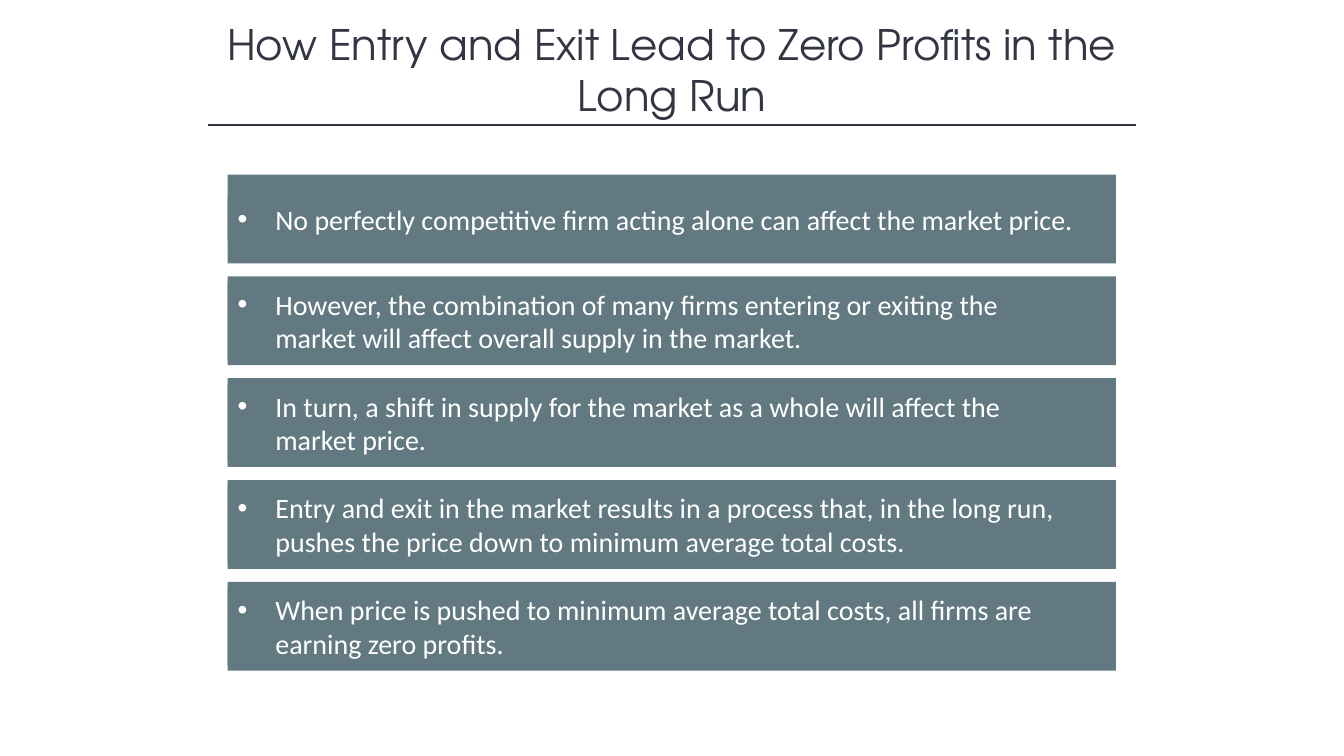
from lxml import etree
from pptx import Presentation
from pptx import util as u
from pptx.dml.color import RGBColor
from pptx.enum import shapes, text
from pptx.oxml.ns import qn

INK, SLATE, WHITE = "323542", "627981", "FFFFFF"
LINE_HEIGHT, CAPTION_PADDING = 0.85, 0.27

# Each statement with the number of lines it takes up
STATEMENTS = [
    ("No perfectly competitive firm acting alone can affect the market price.", 1),
    ("However, the combination of many firms entering or exiting the market "
     "will affect overall supply in the market.", 2),
    ("In turn, a shift in supply for the market as a whole will affect the market price.", 2),
    ("Entry and exit in the market results in a process that, in the long run, "
     "pushes the price down to minimum average total costs.", 2),
    ("When price is pushed to minimum average total costs, all firms are "
     "earning zero profits.", 2),
]


def colour(value):
    return RGBColor.from_string(value)


def write(shape, words, *, size, font, ink, align, bullet=False):
    frame = shape.text_frame
    frame.word_wrap = True
    frame.auto_size = text.MSO_AUTO_SIZE.NONE
    frame.vertical_anchor = text.MSO_ANCHOR.MIDDLE
    para = frame.paragraphs[0]
    para.alignment = align
    if bullet:
        add_bullet(para)
    span = para.add_run()
    span.text = words
    span.font.size = u.Pt(size)
    span.font.name = font
    span.font.color.rgb = colour(ink)


def add_bullet(para, indent=0.95):
    properties = para._p.get_or_add_pPr()
    properties.set("marL", str(u.Cm(indent)))
    properties.set("indent", str(-u.Cm(indent)))
    etree.SubElement(properties, qn("a:buFont")).set("typeface", "Arial")
    etree.SubElement(properties, qn("a:buChar")).set("char", "•")


def add_rectangle(parent, left, top, width, height):
    box = parent.shapes.add_shape(
        shapes.MSO_SHAPE.RECTANGLE, u.Cm(left), u.Cm(top), u.Cm(width), u.Cm(height))
    box.shadow.inherit = False
    box.fill.solid()
    box.fill.fore_color.rgb = colour(SLATE)
    box.line.fill.background()
    return box


def add_heading(page, left, top, width, height):
    title = page.shapes.title
    title.left, title.top = u.Cm(left), u.Cm(top)
    title.width, title.height = u.Cm(width), u.Cm(height)
    write(title, "How Entry and Exit Lead to Zero Profits in the Long Run",
          size=30, font="TeX Gyre Adventor", ink=INK, align=text.PP_ALIGN.CENTER)

    inset, rule_top = 1, u.Cm(top + height)
    rule = page.shapes.add_connector(
        shapes.MSO_CONNECTOR.STRAIGHT,
        u.Cm(left + inset), rule_top, u.Cm(left + width - inset), rule_top)
    rule.line.color.rgb = colour(INK)
    rule.line.width = u.Pt(1)
    etree.SubElement(rule._element.spPr, qn("a:effectLst"))


def add_statement(page, words, lines, left, top, width, height):
    """Group a panel with a caption centred vertically on it."""
    group = page.shapes.add_group_shape()
    add_rectangle(group, left, top, width, height)
    caption_height = lines * LINE_HEIGHT + CAPTION_PADDING
    caption = add_rectangle(
        group, left, top + (height - caption_height) / 2, width - 0.69, caption_height)
    write(caption, words, size=20, font="Calibri", ink=WHITE,
          align=text.PP_ALIGN.LEFT, bullet=True)


def add_statements(page, left, top, width, height, gap=0.33):
    panel_height = (height + gap) / len(STATEMENTS) - gap
    for index, (words, lines) in enumerate(STATEMENTS):
        add_statement(page, words, lines, left, top + index * (panel_height + gap),
                      width, panel_height)


def main():
    deck = Presentation()
    deck.slide_width, deck.slide_height = u.Cm(33.87), u.Cm(19.05)
    page = deck.slides.add_slide(deck.slide_layouts[5])
    page.background.fill.solid()
    page.background.fill.fore_color.rgb = colour(WHITE)
    add_heading(page, 4.23, 0.33, 25.4, 2.82)
    add_statements(page, 5.74, 4.4, 22.38, 12.5)
    deck.save("out.pptx")


if __name__ == "__main__":
    main()
